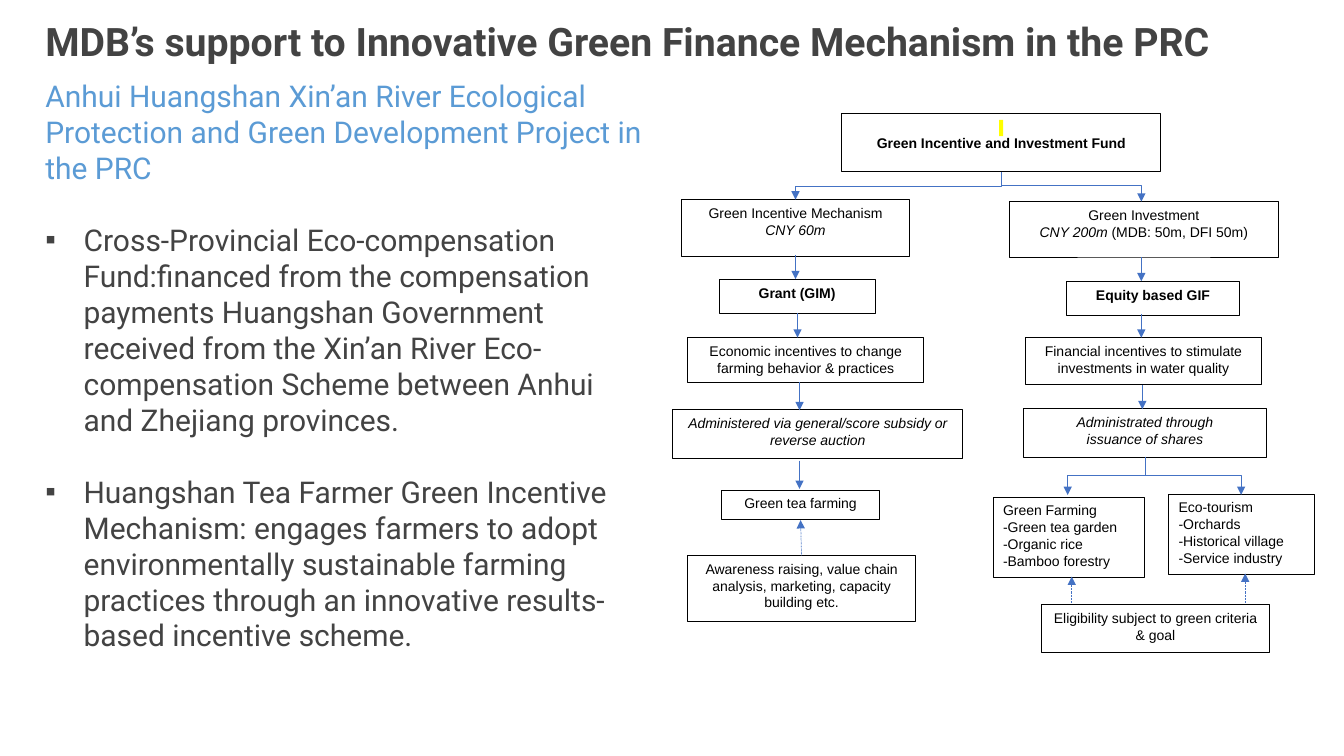
from dataclasses import dataclass

from lxml import etree
from pptx import Presentation
from pptx.dml.color import RGBColor
from pptx.enum import dml, shapes, text
from pptx.oxml.ns import qn
from pptx.util import Inches, Pt

COLORS = {
    "heading": "434343",
    "project": "5B9BD5",
    "ink": "000000",
    "paper": "FFFFFF",
    "arrow": "4472C4",
    "marker": "FFFF00",
}
CENTER, LEFT = text.PP_ALIGN.CENTER, text.PP_ALIGN.LEFT
TOP, MIDDLE = text.MSO_ANCHOR.TOP, text.MSO_ANCHOR.MIDDLE


@dataclass
class Run:
    text: str
    bold: bool = False
    italic: bool = False


@dataclass
class Box:
    left: float
    top: float
    width: float
    height: float
    lines: list[list[Run]]
    align: text.PP_ALIGN = CENTER
    anchor: text.MSO_ANCHOR = TOP


@dataclass
class Arrow:
    x1: float
    y1: float
    x2: float
    y2: float
    dotted: bool = False
    head: bool = True


@dataclass
class Branch:
    """An elbow: falls, runs sideways and falls again, or only turns once."""
    x1: float
    y1: float
    x2: float
    y2: float
    bend: float = 0.5
    single_turn: bool = False


def plain(*lines: str, bold: bool = False, italic: bool = False) -> list[list[Run]]:
    return [[Run(line, bold, italic)] for line in lines]


def color(name: str) -> RGBColor:
    return RGBColor.from_string(COLORS[name])


def write(paragraph, words: str, *, size: float = 10, font: str = "Arial",
          ink: str = "ink", bold: bool = False, italic: bool = False) -> None:
    run = paragraph.add_run()
    run.text = words
    run.font.size, run.font.name = Pt(size), font
    run.font.bold, run.font.italic = bold, italic
    run.font.color.rgb = color(ink)


def add_text_area(slide, left: float, top: float, width: float, height: float):
    frame = slide.shapes.add_textbox(
        Inches(left), Inches(top), Inches(width), Inches(height)).text_frame
    frame.word_wrap = True
    frame.margin_left = frame.margin_right = Inches(0.13)
    frame.margin_top = frame.margin_bottom = Inches(0.13)
    return frame


def add_bullet(paragraph) -> None:
    props = paragraph._p.get_or_add_pPr()
    props.set("marL", str(Inches(0.38)))
    props.set("indent", str(-Inches(0.38)))
    etree.SubElement(props, qn("a:buFont"), typeface="Arial")
    etree.SubElement(props, qn("a:buChar"), char="▪")


def add_rect(slide, left: float, top: float, width: float, height: float, fill: str):
    rect = slide.shapes.add_shape(
        shapes.MSO_SHAPE.RECTANGLE,
        Inches(left), Inches(top), Inches(width), Inches(height))
    rect.shadow.inherit = False
    rect.fill.solid()
    rect.fill.fore_color.rgb = color(fill)
    rect.line.fill.background()
    return rect


def draw_box(slide, box: Box) -> None:
    rect = add_rect(slide, box.left, box.top, box.width, box.height, "paper")
    rect.line.color.rgb = color("ink")
    rect.line.width = Pt(0.5)
    frame = rect.text_frame
    frame.word_wrap = True
    frame.vertical_anchor = box.anchor
    for index, line in enumerate(box.lines):
        paragraph = frame.add_paragraph() if index else frame.paragraphs[0]
        paragraph.alignment = box.align
        for run in line:
            write(paragraph, run.text, bold=run.bold, italic=run.italic)


def add_line(slide, kind, x1: float, y1: float, x2: float, y2: float,
             dotted: bool = False, head: bool = True):
    line = slide.shapes.add_connector(
        kind, Inches(x1), Inches(y1), Inches(x2), Inches(y2))
    line.line.color.rgb = color("arrow")
    line.line.width = Pt(0.5)
    if dotted:
        line.line.dash_style = dml.MSO_LINE.ROUND_DOT
    props = line._element.spPr
    if head:
        etree.SubElement(props.find(qn("a:ln")), qn("a:tailEnd"), type="triangle")
    etree.SubElement(props, qn("a:effectLst"))
    return line


def draw_arrow(slide, arrow: Arrow) -> None:
    add_line(slide, shapes.MSO_CONNECTOR.STRAIGHT, arrow.x1, arrow.y1,
             arrow.x2, arrow.y2, arrow.dotted, arrow.head)


def draw_branch(slide, branch: Branch) -> None:
    elbow = shapes.MSO_CONNECTOR.ELBOW
    if branch.single_turn:
        line = add_line(slide, elbow, branch.x1, branch.y1, branch.x2, branch.y2)
        line._element.spPr.find(qn("a:prstGeom")).set("prst", "bentConnector2")
        return
    # The frame of a falling elbow is turned by a quarter about its centre
    to_right = branch.x2 > branch.x1
    mid_x, mid_y = (branch.x1 + branch.x2) / 2, (branch.y1 + branch.y2) / 2
    half_run = abs(branch.x2 - branch.x1) / 2
    half_fall = (branch.y2 - branch.y1) / 2 * (-1 if to_right else 1)
    line = add_line(slide, elbow, mid_x - half_fall, mid_y - half_run,
                    mid_x + half_fall, mid_y + half_run)
    props = line._element.spPr
    props.find(qn("a:xfrm")).set("rot", str((270 if to_right else 90) * 60000))
    guides = props.find(qn("a:prstGeom")).get_or_add_avLst()
    etree.SubElement(guides, qn("a:gd"), name="adj1",
                     fmla=f"val {round(branch.bend * 100000)}")


TITLE = "MDB’s support to Innovative Green Finance Mechanism in the PRC"
PROJECT = ("Anhui Huangshan Xin’an River Ecological Protection and "
           "Green Development Project in the PRC")
POINTS = [
    "Cross-Provincial Eco-compensation Fund:financed from the compensation payments "
    "Huangshan Government received from the Xin’an River Eco-compensation Scheme "
    "between Anhui and Zhejiang provinces.",
    "Huangshan Tea Farmer Green Incentive Mechanism: engages farmers to adopt "
    "environmentally sustainable farming practices through an innovative "
    "results-based incentive scheme.",
]
BOXES = [
    Box(8.35, 1.13, 3.16, 0.57,
        plain("Green Incentive and Investment Fund", bold=True), anchor=MIDDLE),
    # Grant side
    Box(6.76, 1.98, 2.26, 0.56,
        [[Run("Green Incentive Mechanism")], [Run("CNY 60m", italic=True)]]),
    Box(7.13, 2.77, 1.55, 0.34, plain("Grant (GIM)", bold=True)),
    Box(6.82, 3.35, 2.34, 0.44,
        plain("Economic incentives to change farming behavior & practices")),
    Box(6.67, 4.06, 2.88, 0.49,
        plain("Administered via general/score subsidy or reverse auction", italic=True)),
    Box(7.16, 4.86, 1.56, 0.29, plain("Green tea farming")),
    Box(6.82, 5.51, 2.26, 0.66,
        plain("Awareness raising, value chain analysis, marketing, capacity building etc.")),
    # Equity side
    Box(10.01, 2, 2.67, 0.55,
        [[Run("Green Investment")],
         [Run("CNY 200m ", italic=True), Run("(MDB: 50m, DFI 50m)")]]),
    Box(10.58, 2.79, 1.71, 0.34, plain("Equity based GIF", bold=True)),
    Box(10.17, 3.35, 2.34, 0.46,
        plain("Financial incentives to stimulate investments in water quality")),
    Box(10.15, 4.05, 2.41, 0.49,
        plain("Administrated through", "issuance of shares", italic=True)),
    Box(9.85, 4.93, 1.5, 0.8,
        plain("Green Farming", "-Green tea garden", "-Organic rice", "-Bamboo forestry"),
        LEFT),
    Box(11.59, 4.9, 1.45, 0.8,
        plain("Eco-tourism", "-Orchards", "-Historical village", "-Service industry"),
        LEFT),
    Box(10.33, 6, 2.26, 0.47, plain("Eligibility subject to green criteria & goal")),
]
BRANCHES = [
    Branch(9.93, 1.71, 7.89, 1.98),
    Branch(9.93, 1.71, 11.32, 2, bend=0.455),
    Branch(11.57, 4.72, 10.59, 4.91, single_turn=True),
    Branch(11.55, 4.72, 12.31, 4.91, single_turn=True),
]
ARROWS = [
    Arrow(7.89, 2.53, 7.89, 2.77),
    Arrow(7.91, 3.11, 7.91, 3.35),
    Arrow(7.93, 3.79, 7.93, 4.07),
    Arrow(7.93, 4.57, 7.93, 4.85),
    Arrow(7.95, 5.51, 7.94, 5.16, dotted=True),
    Arrow(11.32, 2.55, 11.32, 2.79),
    Arrow(11.32, 3.12, 11.32, 3.35),
    Arrow(11.33, 3.82, 11.33, 4.06),
    Arrow(11.36, 4.53, 11.36, 4.72, head=False),
    Arrow(10.63, 5.98, 10.63, 5.72, dotted=True),
    Arrow(12.35, 5.98, 12.35, 5.69, dotted=True),
]


def main() -> None:
    deck = Presentation()
    deck.slide_width, deck.slide_height = Inches(13.33), Inches(7.5)
    slide = deck.slides.add_slide(deck.slide_layouts[6])

    # Title and project summary
    title = add_text_area(slide, 0.32, 0.04, 12.4, 0.67)
    write(title.paragraphs[0], TITLE, size=28, font="Roboto", ink="heading", bold=True)
    summary = add_text_area(slide, 0.32, 0.64, 6.19, 6.22)
    write(summary.paragraphs[0], PROJECT, size=21.4, font="Roboto", ink="project")
    for point in POINTS:
        paragraph = summary.add_paragraph()
        add_bullet(paragraph)
        paragraph.space_before = Pt(25.7)
        write(paragraph, point, size=21.4, font="Roboto", ink="heading")

    # Fund flow chart
    for box in BOXES:
        draw_box(slide, box)
    add_rect(slide, 9.91, 1.19, 0.04, 0.16, "marker")
    for branch in BRANCHES:
        draw_branch(slide, branch)
    for arrow in ARROWS:
        draw_arrow(slide, arrow)

    deck.save("out.pptx")


if __name__ == "__main__":
    main()
